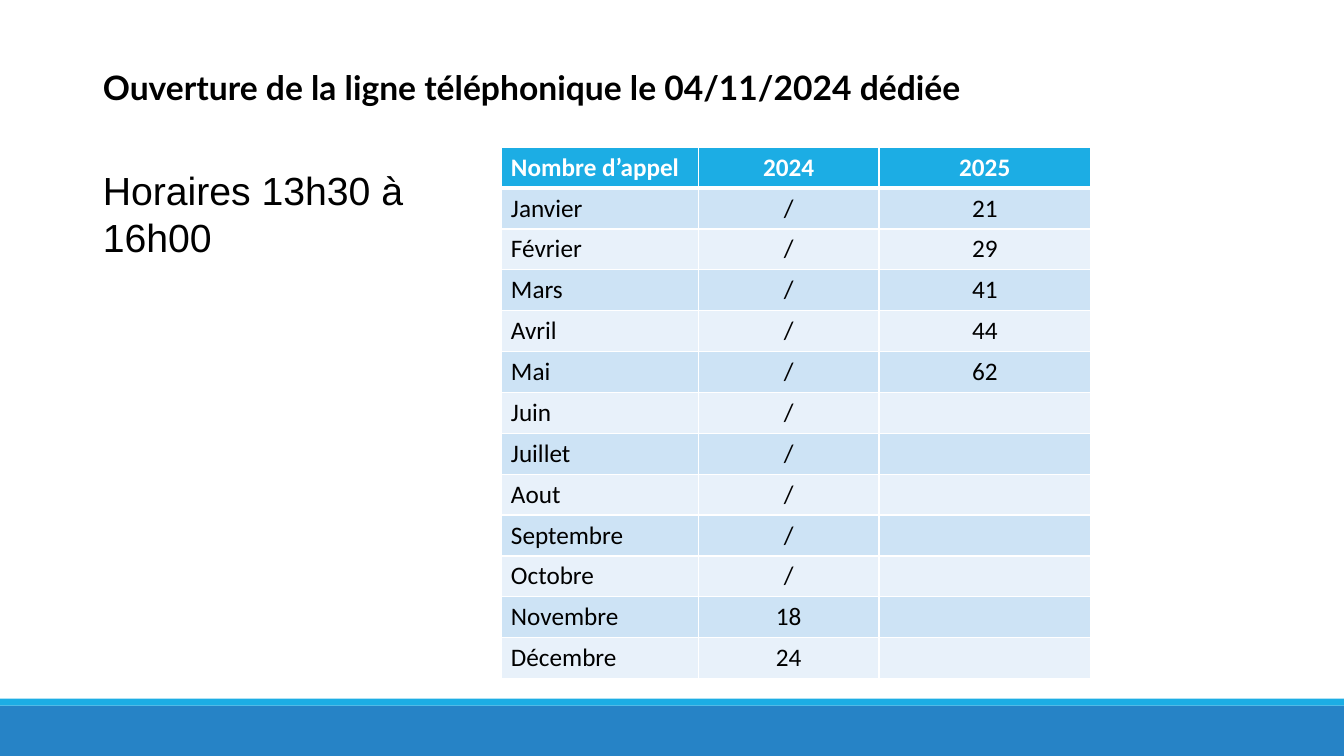
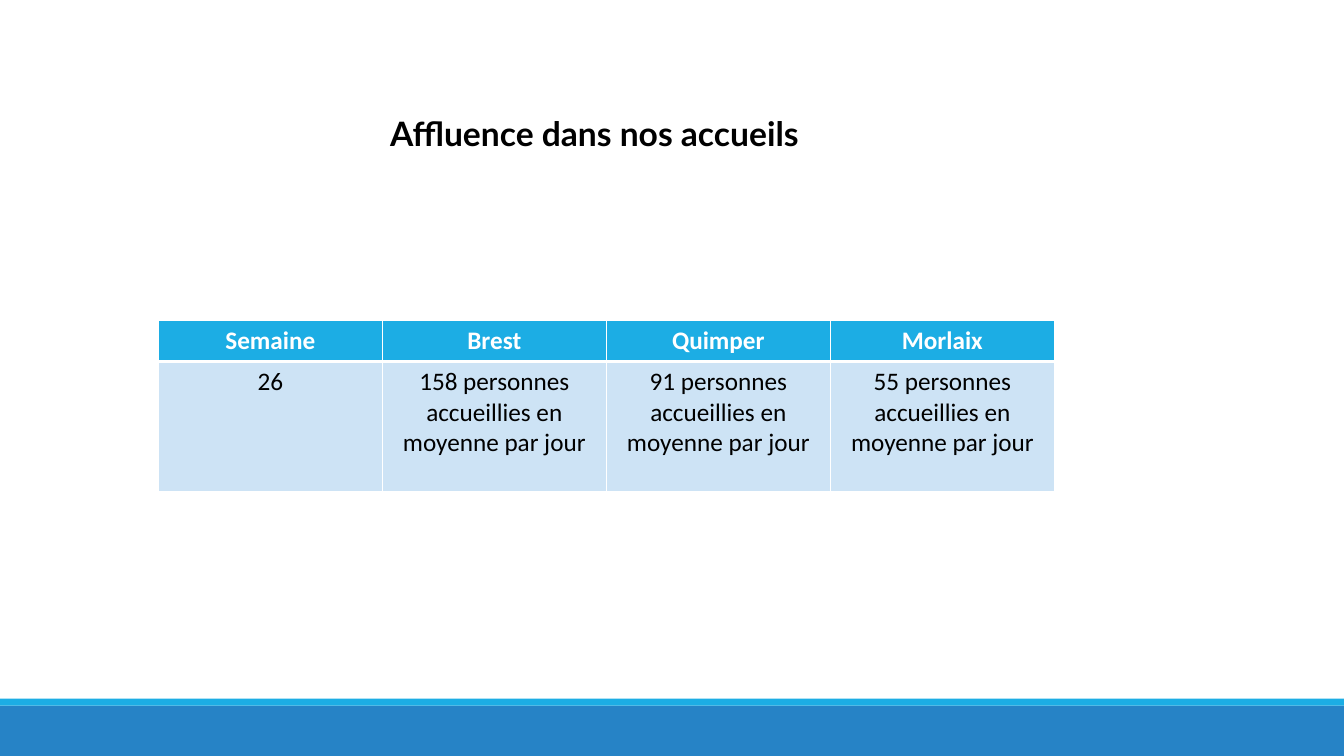
from lxml import etree
from pptx import Presentation, util as u
from pptx.dml.color import RGBColor
from pptx.enum import shapes, text
from pptx.oxml.ns import qn

# Shared look
BLUE, CYAN, WHITE, BLACK = "2683C6", "1CADE4", "FFFFFF", "000000"
STRIPES = ("CDE3F5", "E8F1FA")
WIDE, HIGH = u.Inches(13.333), u.Inches(7.5)
ROW = 5.41  # height of one table line, in % of the slide

MONTHS = ["Janvier", "Février", "Mars", "Avril", "Mai", "Juin", "Juillet",
          "Aout", "Septembre", "Octobre", "Novembre", "Décembre"]
CALLS = {"2024": ["/"] * 10 + ["18", "24"],
         "2025": ["21", "29", "41", "44", "62"] + [""] * 7}
VISITS = {"Brest": 158, "Quimper": 91, "Morlaix": 55}


def color(code):
    return RGBColor.from_string(code)


def across(share):
    return int(WIDE * share / 100)


def down(share):
    return int(HIGH * share / 100)


def place(shape, x, y, w, h):
    """Set a frame, given in % of the slide."""
    shape.left, shape.top = across(x), down(y)
    shape.width, shape.height = across(w), down(h)


def style(par, face, size, code=BLACK, bold=False, align=text.PP_ALIGN.LEFT):
    font = par.font
    font.name, font.size, font.bold = face, u.Pt(size), bold
    font.color.rgb = color(code)
    par.alignment = align


def write(holder, words, area, face, size, bold=False):
    """Fill a placeholder with one plain, unbulleted paragraph."""
    place(holder, *area)
    frame = holder.text_frame
    frame.text = words
    frame.word_wrap = True
    frame.auto_size = text.MSO_AUTO_SIZE.NONE
    frame.vertical_anchor = text.MSO_ANCHOR.TOP
    par = frame.paragraphs[0]
    par.space_before = u.Pt(0)
    style(par, face, size, bold=bold)
    props = par._p.get_or_add_pPr()
    props.set("marL", "0")
    props.set("indent", "0")
    bullet = etree.Element(qn("a:buNone"))
    props.insert(props.index(props.find(qn("a:defRPr"))), bullet)


def title(slide, words, area):
    write(slide.shapes.title, words, area, "Lato", 24, bold=True)


def edge(cell, **widths):
    """Draw white cell borders; widths in points by side."""
    props = cell._tc.get_or_add_tcPr()
    for side in "LRTB":
        line = etree.SubElement(props, qn("a:ln" + side),
                                w=str(u.Pt(widths.get(side, 1))))
        fill = etree.SubElement(line, qn("a:solidFill"))
        etree.SubElement(fill, qn("a:srgbClr"), val=WHITE)


def table(slide, x, y, cols, rows, data, left=False):
    """Header plus striped rows; left aligns the first column."""
    grid = slide.shapes.add_table(
        len(rows), len(cols), across(x), down(y),
        across(sum(cols)), down(sum(rows))).table
    for col, w in zip(grid.columns, cols):
        col.width = across(w)
    for r, (line, h) in enumerate(zip(data, rows)):
        grid.rows[r].height = down(h)
        head = r == 0
        for c, words in enumerate(line):
            cell = grid.cell(r, c)
            cell.text = words
            edge(cell, B=3 if head else 1, T=3 if r == 1 else 1)
            cell.fill.solid()
            cell.fill.fore_color.rgb = color(
                CYAN if head else STRIPES[(r - 1) % 2])
            align = (text.PP_ALIGN.LEFT if left and c == 0
                     else text.PP_ALIGN.CENTER)
            style(cell.text_frame.paragraphs[0], "Calibri", 18,
                  WHITE if head else BLACK, head, align)


def band(slide, master, y, h, code):
    """Draw a full-width band and move it to the master."""
    bar = slide.shapes.add_shape(shapes.MSO_SHAPE.RECTANGLE,
                                 0, down(y), WIDE, down(h))
    bar.shadow.inherit = False
    bar.fill.solid()
    bar.fill.fore_color.rgb = color(code)
    bar.line.fill.background()
    tree = master.shapes.element
    bar.element.nvSpPr.cNvPr.set("id", str(100 + len(tree)))
    tree.append(bar.element)


def phone(deck):
    slide = deck.slides.add_slide(deck.slide_layouts[1])
    title(slide, "Ouverture de la ligne téléphonique le 04/11/2024 dédiée",
          (6.9, 8.13, 79.65, 6.67))
    write(slide.placeholders[1], "Horaires 13h30 à 16h00",
          (6.9, 21.33, 23.93, 13.7), "Arial", 28)
    data = [["Nombre d’appel", *CALLS], *zip(MONTHS, *CALLS.values())]
    table(slide, 37.27, 19.47, [14.7, 13.43, 15.75], [ROW] * len(data),
          data, left=True)
    return slide


def visits(deck):
    slide = deck.slides.add_slide(deck.slide_layouts[5])
    title(slide, "Affluence dans nos accueils", (28.27, 14.27, 49.73, 6.67))
    means = [f"{n} personnes accueillies en moyenne par jour"
             for n in VISITS.values()]
    table(slide, 11.78, 42.4, [16.67] * 4, [ROW, 17.2],
          [["Semaine", *VISITS], ["26", *means]])


def main():
    deck = Presentation()
    deck.slide_width, deck.slide_height = WIDE, HIGH
    first = phone(deck)
    visits(deck)
    # Footer bands
    band(first, deck.slide_master, 93.33, 6.67, BLUE)
    band(first, deck.slide_master, 92.4, 0.93, CYAN)
    deck.save("out.pptx")


if __name__ == "__main__":
    main()
